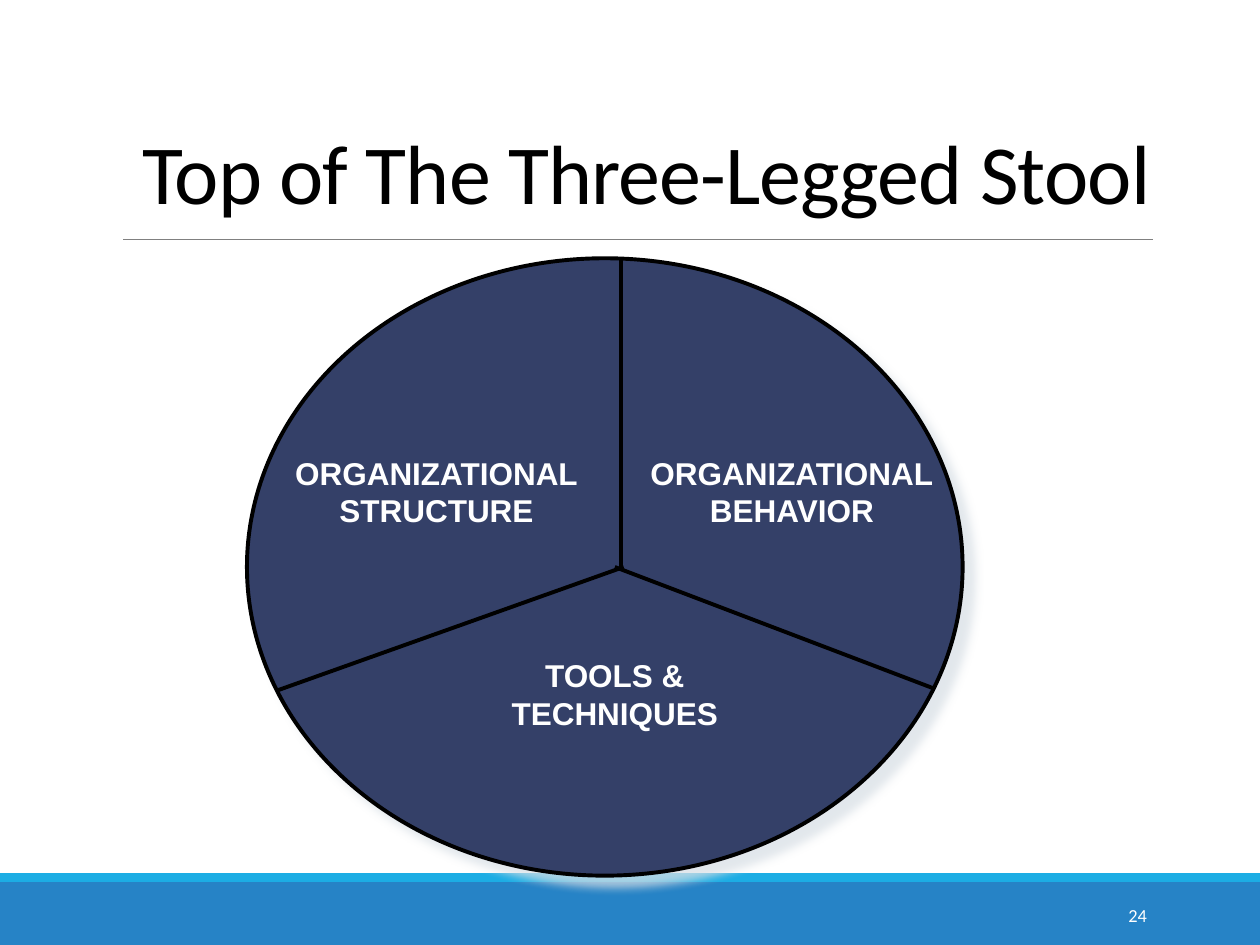
from dataclasses import dataclass

from lxml import etree
from pptx import Presentation
from pptx.dml.color import RGBColor
from pptx.enum.shapes import MSO_CONNECTOR, MSO_SHAPE
from pptx.enum.text import MSO_ANCHOR, MSO_AUTO_SIZE, PP_ALIGN
from pptx.oxml.ns import qn
from pptx.util import Inches, Pt


@dataclass(frozen=True)
class Theme:
    band: RGBColor = RGBColor.from_string("2683C6")
    stripe: RGBColor = RGBColor.from_string("1CADE4")
    rule: RGBColor = RGBColor.from_string("808080")
    seat: RGBColor = RGBColor.from_string("344068")
    ink: RGBColor = RGBColor.from_string("000000")
    light: RGBColor = RGBColor.from_string("FFFFFF")
    shadow: str = "D9E0E6"
    heading_font: str = "Calibri"
    label_font: str = "Arial"
    title_size: Pt = Pt(48)
    label_size: Pt = Pt(18)
    number_size: Pt = Pt(10.5)


theme = Theme()
prs = Presentation()
prs.slide_width, prs.slide_height = Inches(10), Inches(7.5)
s = prs.slides.add_slide(prs.slide_layouts[6])


def add_line(x1, y1, x2, y2, color, width):
    line = s.shapes.add_connector(
        MSO_CONNECTOR.STRAIGHT, Inches(x1), Inches(y1), Inches(x2), Inches(y2))
    line.line.color.rgb = color
    line.line.width = Pt(width)
    etree.SubElement(line.element.spPr, qn("a:effectLst"))


def add_text(box, lines, font, size, color, align, anchor=MSO_ANCHOR.TOP, wrap=True):
    tf = s.shapes.add_textbox(*map(Inches, box)).text_frame
    tf.word_wrap = wrap
    tf.vertical_anchor = anchor
    for i, line in enumerate(lines):
        p = tf.paragraphs[0] if i == 0 else tf.add_paragraph()
        p.text = line
        p.alignment = align
        p.font.name, p.font.size, p.font.color.rgb = font, size, color
    return tf


# Footer band and its stripe
for top, height, color in ((7, 0.5, theme.band), (6.93, 0.07, theme.stripe)):
    sp = s.shapes.add_shape(
        MSO_SHAPE.RECTANGLE, 0, Inches(top), prs.slide_width, Inches(height))
    sp.shadow.inherit = False
    sp.fill.solid()
    sp.fill.fore_color.rgb = color
    sp.line.fill.background()

# Title with the rule below it
add_line(0.98, 1.9, 9.15, 1.9, theme.rule, 0.5)
tf = add_text((1.03, 0.6, 8.42, 1.21), ["Top of The Three-Legged Stool"],
              theme.heading_font, theme.title_size, theme.ink,
              PP_ALIGN.LEFT, MSO_ANCHOR.BOTTOM)
p = tf.paragraphs[0]
p.line_spacing = 0.85
p.runs[0].font._element.set("spc", "-50")

# Stool seat with a soft shadow to the lower right
seat = s.shapes.add_shape(
    MSO_SHAPE.OVAL, Inches(1.96), Inches(2.05), Inches(5.68), Inches(4.9))
seat.fill.solid()
seat.fill.fore_color.rgb = theme.seat
seat.line.color.rgb = theme.ink
seat.line.width = Pt(2.25)
seat.shadow.inherit = False
effects = seat.element.spPr.find(qn("a:effectLst"))
shadow = etree.SubElement(
    effects, qn("a:outerShdw"), blurRad=str(Pt(5)), dist=str(Pt(8.5)),
    dir=str(45 * 60000), algn="ctr", rotWithShape="0")
tint = etree.SubElement(shadow, qn("a:srgbClr"), val=theme.shadow)
etree.SubElement(tint, qn("a:alpha"), val="75000")

# Dividers between the three sectors
for ends in ((2.2, 5.48, 4.95, 4.5), (4.88, 4.5, 7.4, 5.46), (4.93, 4.52, 4.93, 2.05)):
    add_line(*ends, theme.ink, 2.25)

# Sector labels
for box, lines in (
    ((2.23, 3.55, 2.47, 0.71), ["ORGANIZATIONAL", "STRUCTURE"]),
    ((5.05, 3.55, 2.47, 0.71), ["ORGANIZATIONAL", "BEHAVIOR"]),
    ((3.95, 5.16, 1.86, 0.71), ["TOOLS &", "TECHNIQUES"]),
):
    tf = add_text(box, lines, theme.label_font, theme.label_size, theme.light,
                  PP_ALIGN.CENTER, wrap=False)
    tf.auto_size = MSO_AUTO_SIZE.SHAPE_TO_FIT_TEXT
    for p in tf.paragraphs:
        p.font.bold = True

# Slide number
add_text((8.12, 7.06, 1.08, 0.4), ["24"], theme.heading_font, theme.number_size,
         theme.light, PP_ALIGN.RIGHT, MSO_ANCHOR.MIDDLE)

prs.save("out.pptx")
